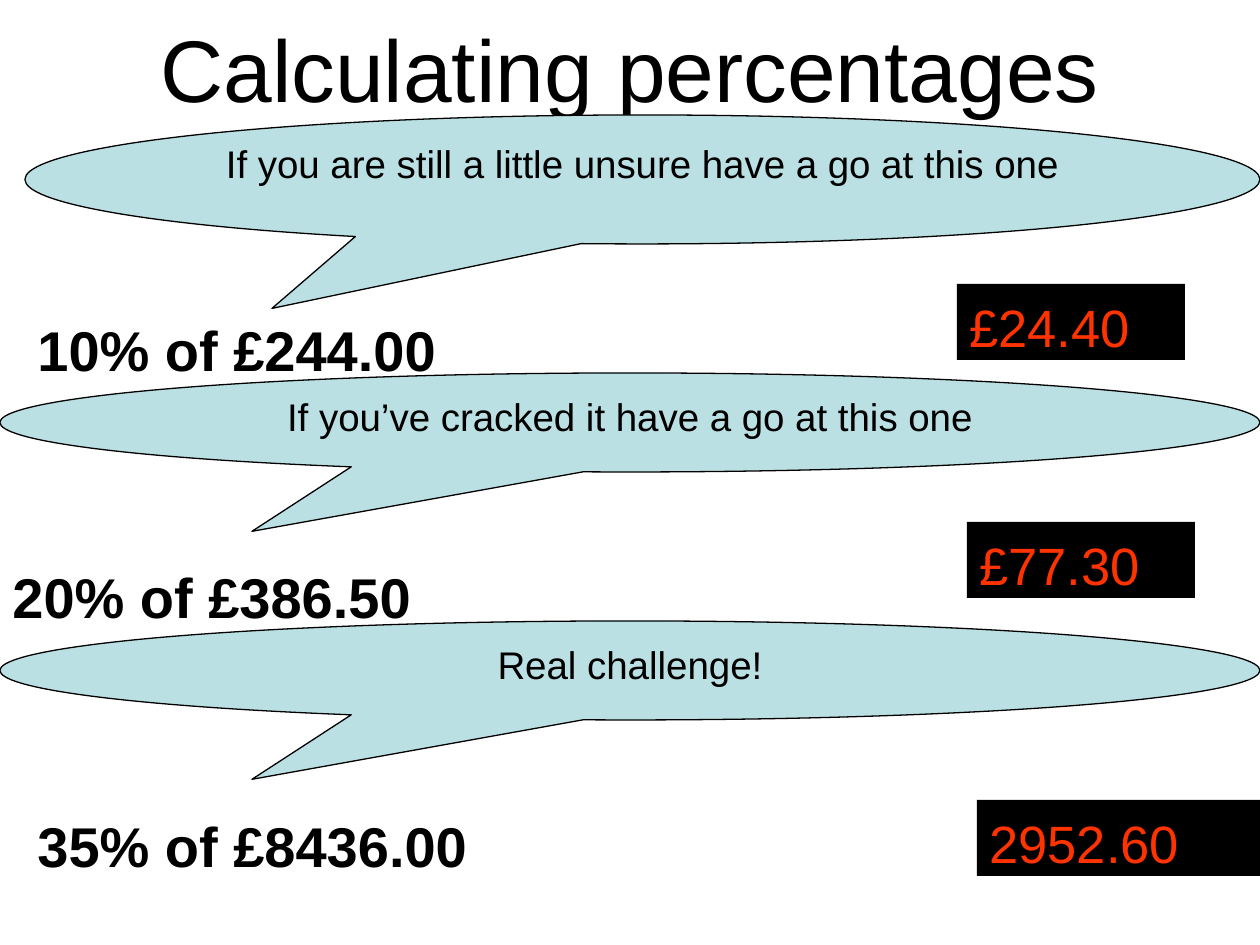
from dataclasses import dataclass

from pptx import Presentation
from pptx import util as u
from pptx.dml import color
from pptx.enum import shapes, text

PX = u.Inches(1) // 126  # one px in EMU


@dataclass(frozen=True)
class Theme:
    font: str = "Arial"
    ink: str = "000000"
    bubble: str = "BBE0E3"
    answer: str = "FF3300"
    title_size: int = 50
    sum_size: int = 32
    answer_size: int = 30
    bubble_size: int = 22
    outline: float = 0.75


@dataclass(frozen=True)
class Box:
    left: int
    top: int
    width: int
    height: int

    def emu(self) -> list[int]:
        return [side * PX for side in (self.left, self.top, self.width, self.height)]


@dataclass(frozen=True)
class Question:
    prompt: str
    bubble: Box
    tail: tuple[float, float]
    sum_text: str
    sum_box: Box
    answer: str
    answer_box: Box


THEME = Theme()
QUESTIONS = [
    Question("If you are still a little unsure have a go at this one",
             Box(25, 115, 1235, 129), (-0.3, 1.0),
             "10% of £244.00", Box(25, 304, 586, 79),
             "£24.40", Box(957, 284, 228, 76)),
    Question("If you’ve cracked it have a go at this one",
             Box(0, 373, 1260, 99), (-0.3, 1.1),
             "20% of £386.50", Box(0, 552, 586, 79),
             "£77.30", Box(967, 522, 228, 76)),
    Question("Real challenge!",
             Box(0, 621, 1260, 99), (-0.3, 1.1),
             "35% of £8436.00", Box(25, 800, 586, 79),
             "2952.60", Box(977, 800, 283, 76)),
]


def rgb(value: str) -> color.RGBColor:
    return color.RGBColor.from_string(value)


def write(shape, words: str, *, size: int, ink: str = THEME.ink, bold: bool = False,
          centred: bool = False, inset_top: int = 6) -> None:
    """Put one formatted paragraph at the top of a shape."""
    frame = shape.text_frame
    frame.word_wrap = True
    frame.vertical_anchor = text.MSO_ANCHOR.TOP
    frame.margin_top = inset_top * PX
    para = frame.paragraphs[0]
    para.alignment = text.PP_ALIGN.CENTER if centred else text.PP_ALIGN.LEFT
    span = para.add_run()
    span.text = words
    span.font.name = THEME.font
    span.font.size = u.Pt(size)
    span.font.bold = bold
    span.font.color.rgb = rgb(ink)


def add_filled(page, kind: shapes.MSO_SHAPE, box: Box, fill: str):
    shape = page.shapes.add_shape(kind, *box.emu())
    shape.shadow.inherit = False
    shape.fill.solid()
    shape.fill.fore_color.rgb = rgb(fill)
    return shape


def add_bubble(page, question: Question) -> None:
    bubble = add_filled(page, shapes.MSO_SHAPE.OVAL_CALLOUT, question.bubble, THEME.bubble)
    bubble.adjustments[0], bubble.adjustments[1] = question.tail
    bubble.line.color.rgb = rgb(THEME.ink)
    bubble.line.width = u.Pt(THEME.outline)
    write(bubble, question.prompt, size=THEME.bubble_size, centred=True)


def add_sum(page, question: Question) -> None:
    box = page.shapes.add_textbox(*question.sum_box.emu())
    write(box, question.sum_text, size=THEME.sum_size, bold=True, inset_top=11)


def add_answer(page, question: Question) -> None:
    box = add_filled(page, shapes.MSO_SHAPE.RECTANGLE, question.answer_box, THEME.ink)
    box.line.fill.background()
    write(box, question.answer, size=THEME.answer_size, ink=THEME.answer, inset_top=11)


def main() -> None:
    deck = Presentation()
    deck.slide_width, deck.slide_height = 1260 * PX, 945 * PX
    page = deck.slides.add_slide(deck.slide_layouts[6])

    # Title
    title = page.shapes.add_textbox(*Box(0, 0, 1260, 115).emu())
    write(title, "Calculating percentages", size=THEME.title_size, centred=True, inset_top=15)

    # Bubbles lie behind the sums and answers
    for draw in (add_bubble, add_sum, add_answer):
        for question in QUESTIONS:
            draw(page, question)

    deck.save("out.pptx")


if __name__ == "__main__":
    main()
